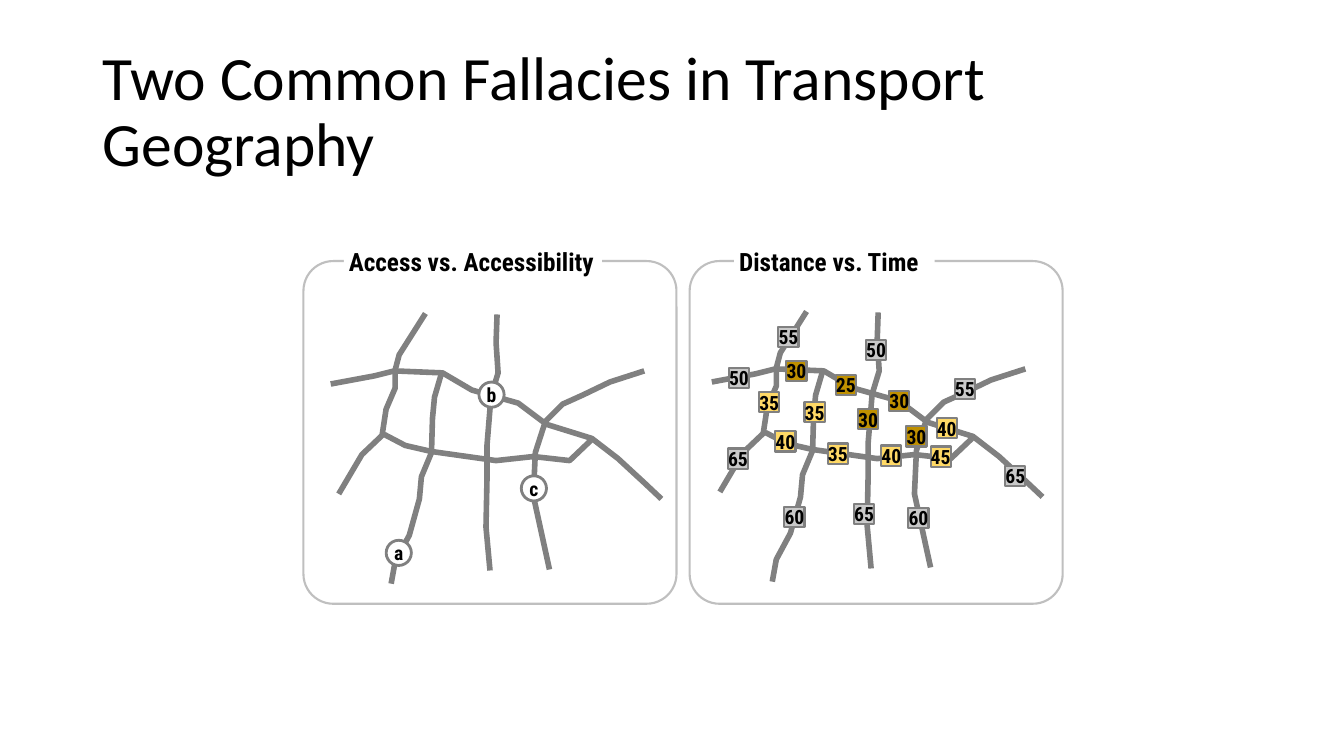
"""Build the slide on two common fallacies in transport geography."""
from dataclasses import dataclass

from pptx import Presentation
from pptx.dml.color import RGBColor
from pptx.enum.shapes import MSO_SHAPE
from pptx.enum.text import MSO_ANCHOR, MSO_AUTO_SIZE, PP_ALIGN
from pptx.util import Pt

ELLIPSE, RECT, ROUNDED = MSO_SHAPE.OVAL, MSO_SHAPE.RECTANGLE, MSO_SHAPE.ROUNDED_RECTANGLE
TOP, MIDDLE = MSO_ANCHOR.TOP, MSO_ANCHOR.MIDDLE
LEFT, CENTER = PP_ALIGN.LEFT, PP_ALIGN.CENTER
FIT_TEXT = MSO_AUTO_SIZE.SHAPE_TO_FIT_TEXT

PX = 9144
SLIDE_SIZE = (1333, 750)

TITLE = "Two Common Fallacies in Transport Geography"
TITLE_BOX = (92, 40, 1150, 145)

ROADS = [
    [(328, 381), (371, 373), (391, 368), (439, 370), (468, 387), (514, 400),
     (542, 421), (587, 435), (613, 455), (639, 479), (656, 495)],
    [(336, 490), (359, 451), (379, 432), (383, 406), (392, 385), (392, 367),
     (396, 352), (422, 311)],
    [(438, 370), (431, 394), (429, 415), (428, 449), (418, 473), (416, 495),
     (406, 531), (392, 557), (388, 579)],
    [(381, 431), (402, 442), (428, 448), (492, 457), (529, 453), (565, 457), (586, 437)],
    [(486, 566), (482, 523), (483, 476), (483, 442), (487, 393), (494, 370),
     (492, 340), (493, 312)],
    [(639, 368), (605, 379), (578, 392), (558, 401), (541, 418), (531, 449),
     (529, 492), (545, 565)],
]
MAP_OFFSETS = [(0, 0), (378, -2)]

PLACES = [("a", 383, 536), ("b", 475, 379), ("c", 517, 472)]
PLACE_SIZE = 25

SPEEDS = [
    (60, 778, 503), (35, 798, 399), (50, 723, 365), (30, 780, 358), (25, 829, 372),
    (55, 772, 324), (35, 753, 389), (65, 722, 445), (40, 769, 428), (35, 821, 440),
    (65, 847, 500), (30, 851, 406), (50, 859, 337), (30, 882, 388), (40, 874, 442),
    (60, 901, 504), (65, 997, 462), (45, 923, 443), (40, 929, 415), (30, 899, 423),
    (55, 947, 376),
]
SPEED_SIZE = 20

PANEL_LEFTS = [301, 684]
PANEL_TOP, PANEL_WIDTH, PANEL_HEIGHT = 259, 370, 340
PANEL_ROUNDING = 0.087
HEADINGS = [("Access vs. Accessibility", 341, 256), ("Distance vs. Time", 728, 199)]
HEADING_TOP, HEADING_HEIGHT, HEADING_INSET = 244, 30, 5


@dataclass(frozen=True)
class Theme:
    """Colours, fonts and type sizes of the slide."""
    ink: str = "000000"
    paper: str = "FFFFFF"
    road: str = "808080"
    frame: str = "BFBFBF"
    slow: str = "BF9000"
    medium: str = "FFD966"
    fast: str = "C9C9C9"
    title_font: str = "Calibri"
    map_font: str = "Roboto Condensed"
    title_size: int = 44
    heading_size: int = 18
    mark_size: int = 14


THEME = Theme()


def px(*lengths):
    """Turn px lengths into EMU."""
    return [length * PX for length in lengths]


def speed_color(speed):
    """Choose the colour of a speed class."""
    if speed <= 30:
        return THEME.slow
    return THEME.medium if speed < 50 else THEME.fast


def paint(shape, fill, line, width):
    """Set fill and outline, where None means none."""
    shape.shadow.inherit = False
    if fill:
        shape.fill.solid()
        shape.fill.fore_color.rgb = RGBColor.from_string(fill)
    else:
        shape.fill.background()
    if line:
        shape.line.color.rgb = RGBColor.from_string(line)
        shape.line.width = Pt(width)
    else:
        shape.line.fill.background()


def write(shape, words, font, size, bold, align, anchor, wrap, insets):
    """Write one paragraph into a shape."""
    frame = shape.text_frame
    frame.word_wrap = wrap
    frame.vertical_anchor = anchor
    side, end = px(*insets)
    frame.margin_left = frame.margin_right = side
    frame.margin_top = frame.margin_bottom = end
    paragraph = frame.paragraphs[0]
    paragraph.alignment = align
    run = paragraph.add_run()
    run.text = words
    run.font.name, run.font.size, run.font.bold = font, Pt(size), bold
    run.font.color.rgb = RGBColor.from_string(THEME.ink)
    return paragraph


def add_roads(shapes, offset):
    """Draw the road network shifted by an offset."""
    dx, dy = offset
    for road in ROADS:
        start, *bends = [(x + dx, y + dy) for x, y in road]
        builder = shapes.build_freeform(*start, scale=PX)
        builder.add_line_segments(bends, close=False)
        paint(builder.convert_to_shape(), None, THEME.road, 4)


def add_mark(shapes, kind, words, left, top, size, fill, width):
    """Place a labelled mark on a road."""
    mark = shapes.add_shape(kind, *px(left, top, size, size))
    paint(mark, fill, THEME.road, width)
    write(mark, words, THEME.map_font, THEME.mark_size, True, CENTER, MIDDLE, False, (0, 0))


def main():
    """Compose and save the slide."""
    deck = Presentation()
    deck.slide_width, deck.slide_height = px(*SLIDE_SIZE)
    shapes = deck.slides.add_slide(deck.slide_layouts[6]).shapes

    title = shapes.add_textbox(*px(*TITLE_BOX))
    write(title, TITLE, THEME.title_font, THEME.title_size, False,
          LEFT, MIDDLE, True, (10, 5)).line_spacing = 0.9

    access_offset, time_offset = MAP_OFFSETS
    add_roads(shapes, access_offset)
    for place, left, top in PLACES:
        add_mark(shapes, ELLIPSE, place, left, top, PLACE_SIZE, THEME.paper, 2)
    add_roads(shapes, time_offset)
    for speed, left, top in SPEEDS:
        add_mark(shapes, RECT, str(speed), left, top, SPEED_SIZE, speed_color(speed), 1.5)

    for left in PANEL_LEFTS:
        panel = shapes.add_shape(ROUNDED, *px(left, PANEL_TOP, PANEL_WIDTH, PANEL_HEIGHT))
        panel.adjustments[0] = PANEL_ROUNDING
        paint(panel, None, THEME.frame, 1.5)
    for words, left, width in HEADINGS:
        heading = shapes.add_shape(RECT, *px(left, HEADING_TOP, width, HEADING_HEIGHT))
        paint(heading, THEME.paper, None, 0)
        write(heading, words, THEME.map_font, THEME.heading_size, True,
              LEFT, TOP, False, (HEADING_INSET, 0))
        heading.text_frame.auto_size = FIT_TEXT

    deck.save("out.pptx")


if __name__ == "__main__":
    main()
